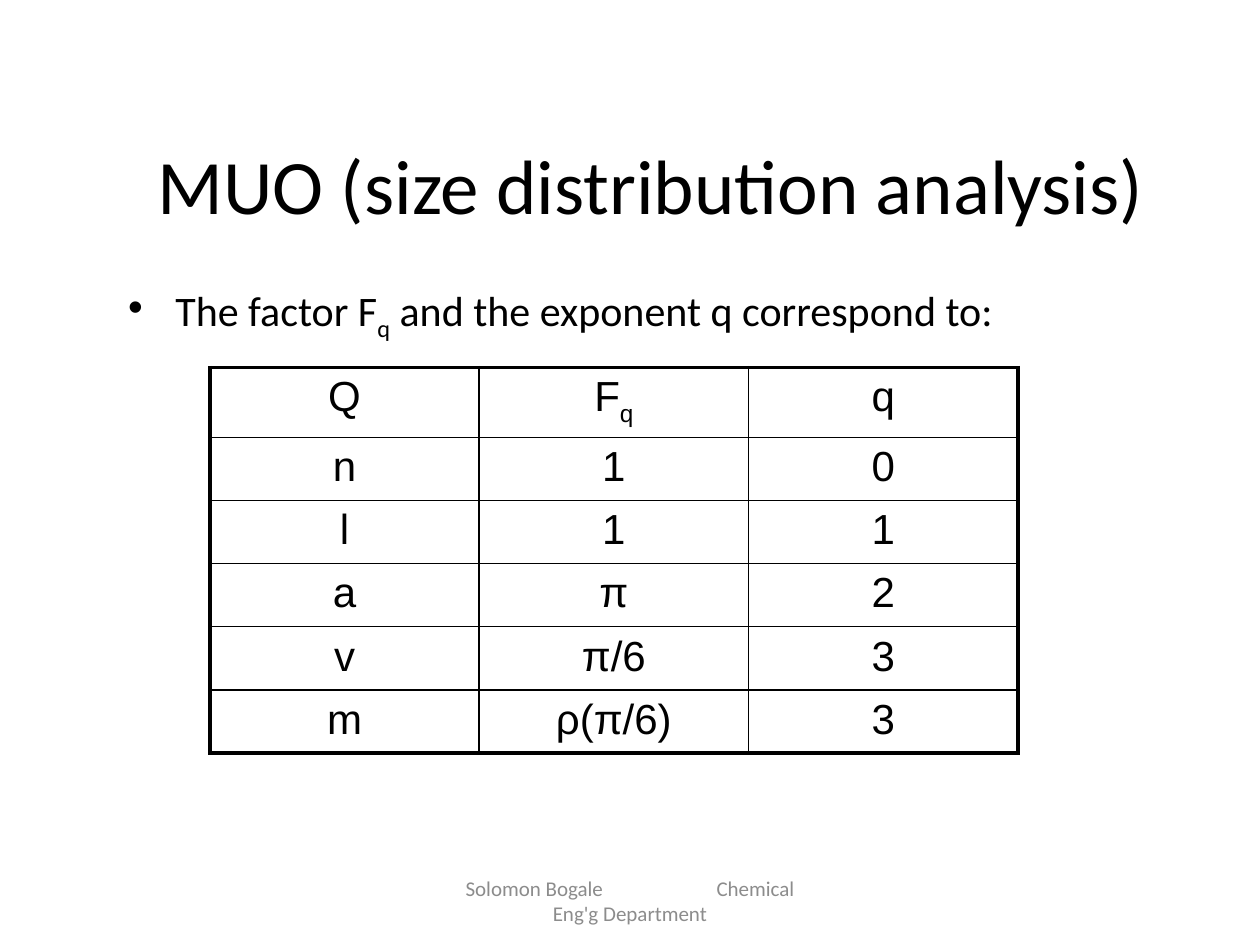
"""Build the size distribution analysis slide with its factor table."""
from dataclasses import dataclass

from lxml.etree import SubElement
from pptx import Presentation
from pptx.dml.color import RGBColor
from pptx.enum.text import MSO_ANCHOR as Anchor, MSO_AUTO_SIZE as AutoSize, PP_ALIGN as Align
from pptx.oxml.ns import qn
from pptx.util import Cm, Pt


@dataclass(frozen=True)
class Theme:
    ink: RGBColor = RGBColor(0, 0, 0)
    muted: RGBColor = RGBColor(0x8C, 0x8C, 0x8C)
    text_font: str = "Calibri"
    table_font: str = "Arial"
    title_size: float = 44
    body_size: float = 24
    footer_size: float = 12
    outer_line: float = 2.25
    inner_line: float = 1


@dataclass(frozen=True)
class Frame:
    left: float
    top: float
    width: float
    height: float


@dataclass(frozen=True)
class FactorRow:
    quantity: str
    factor: str
    exponent: str
    subscript: str = ""


THEME = Theme()
ROWS = [
    FactorRow("Q", "F", "q", subscript="q"),
    FactorRow("n", "1", "0"),
    FactorRow("l", "1", "1"),
    FactorRow("a", "π", "2"),
    FactorRow("v", "π/6", "3"),
    FactorRow("m", "ρ(π/6)", "3"),
]
TITLE = Frame(2.12, 2.12, 22.01, 3.18)
BODY = Frame(2.33, 5.72, 21.38, 11.43)
TABLE = Frame(4.23, 7.41, 16.29, 5.34)
FOOTER = Frame(8.68, 17.65, 8.04, 1.02)


def place(box, frame: Frame) -> None:
    """Move and size a shape to its frame."""
    box.left, box.top = Cm(frame.left), Cm(frame.top)
    box.width, box.height = Cm(frame.width), Cm(frame.height)


def style_runs(para, font: str, size: float, color: RGBColor) -> None:
    """Give every run of a paragraph one look."""
    for span in para.runs:
        span.font.name = font
        span.font.size = Pt(size)
        span.font.color.rgb = color


def add_subscript(para, text: str) -> None:
    """Append a lowered run to a paragraph."""
    span = para.add_run()
    span.text = text
    span.font._element.set("baseline", "-25000")


def add_title(page, text: str) -> None:
    """Fill the title placeholder."""
    box = page.shapes.title
    place(box, TITLE)
    box.text_frame.text = text
    box.text_frame.vertical_anchor = Anchor.MIDDLE
    para = box.text_frame.paragraphs[0]
    para.alignment = Align.CENTER
    style_runs(para, THEME.text_font, THEME.title_size, THEME.ink)


def add_body(page, before: str, subscript: str, after: str) -> None:
    """Fill the body placeholder with one bulleted sentence."""
    box = page.placeholders[1]
    place(box, BODY)
    box.text_frame.auto_size = AutoSize.NONE
    para = box.text_frame.paragraphs[0]
    para.text = before
    add_subscript(para, subscript)
    para.add_run().text = after
    para.line_spacing = 0.8
    para.space_before = Pt(0)
    properties = para._p.get_or_add_pPr()
    properties.set("marL", str(Cm(0.95)))
    properties.set("indent", str(Cm(-0.95)))
    SubElement(properties, qn("a:buChar"), char="•")
    style_runs(para, THEME.text_font, THEME.body_size, THEME.ink)


def set_borders(cell, outer_sides: dict[str, bool]) -> None:
    """Draw the four cell borders, heavier on the table's edge."""
    properties = cell._tc.get_or_add_tcPr()
    for side, is_outer in outer_sides.items():
        width = THEME.outer_line if is_outer else THEME.inner_line
        line = SubElement(properties, qn(f"a:{side}"), w=str(Pt(width)))
        fill = SubElement(line, qn("a:solidFill"))
        SubElement(fill, qn("a:srgbClr"), val=str(THEME.ink))


def add_factor_table(page, rows: list[FactorRow]) -> None:
    """Draw the table of quantities, factors and exponents."""
    last_row, last_column = len(rows) - 1, 2
    frame = page.shapes.add_table(
        len(rows), last_column + 1,
        Cm(TABLE.left), Cm(TABLE.top), Cm(TABLE.width), Cm(TABLE.height))
    table = frame.table
    table.first_row = table.horz_banding = False
    for row_index, row in enumerate(rows):
        table.rows[row_index].height = Cm(0.89)
        for column, text in enumerate((row.quantity, row.factor, row.exponent)):
            cell = table.cell(row_index, column)
            para = cell.text_frame.paragraphs[0]
            para.text = text
            if column == 1 and row.subscript:
                add_subscript(para, row.subscript)
            para.alignment = Align.CENTER
            style_runs(para, THEME.table_font, THEME.body_size, THEME.ink)
            set_borders(cell, {
                "lnL": column == 0,
                "lnR": column == last_column,
                "lnT": row_index == 0,
                "lnB": row_index == last_row,
            })
            cell.fill.background()


def add_footer(page, text: str) -> None:
    """Add the centred footer with a tab between author and department."""
    box = page.shapes.add_textbox(0, 0, 0, 0)
    place(box, FOOTER)
    box.text_frame.word_wrap = True
    box.text_frame.vertical_anchor = Anchor.MIDDLE
    para = box.text_frame.paragraphs[0]
    para.text = text
    para.alignment = Align.CENTER
    stops = SubElement(para._p.get_or_add_pPr(), qn("a:tabLst"))
    SubElement(stops, qn("a:tab"), pos=str(Cm(5.06)), algn="l")
    style_runs(para, THEME.text_font, THEME.footer_size, THEME.muted)


def main() -> None:
    """Build and save the deck."""
    deck = Presentation()
    deck.slide_width, deck.slide_height = Cm(25.4), Cm(19.05)
    page = deck.slides.add_slide(deck.slide_layouts[1])
    add_footer(page, "Solomon Bogale\tChemical Eng'g Department")
    add_title(page, "MUO (size distribution analysis)")
    add_body(page, "The factor F", "q", " and the exponent q correspond to:")
    add_factor_table(page, ROWS)
    deck.save("out.pptx")


if __name__ == "__main__":
    main()
